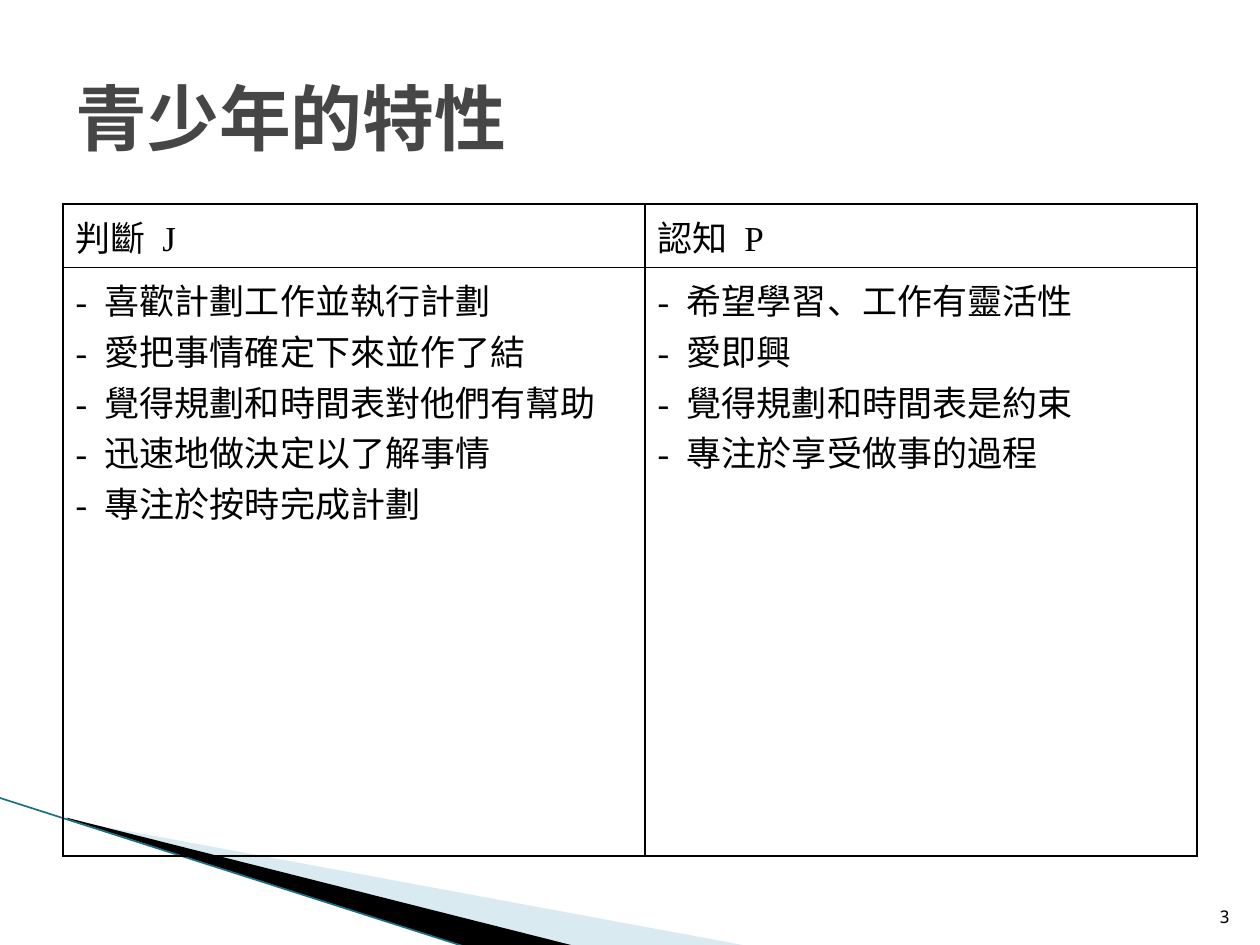
from lxml import etree
from pptx import Presentation
from pptx.dml.color import RGBColor
from pptx.enum.shapes import MSO_CONNECTOR
from pptx.enum.text import MSO_ANCHOR, PP_ALIGN
from pptx.oxml.ns import qn
from pptx.util import Inches, Pt

STRAIGHT = MSO_CONNECTOR.STRAIGHT
MIDDLE, BOTTOM = MSO_ANCHOR.MIDDLE, MSO_ANCHOR.BOTTOM
LEFT, RIGHT = PP_ALIGN.LEFT, PP_ALIGN.RIGHT
TITLE_ONLY = 5

BLACK = RGBColor(0x00, 0x00, 0x00)
GREY = RGBColor(0x46, 0x46, 0x46)
PALE_BLUE = RGBColor(0xA0, 0xCB, 0xDC)
TEAL = RGBColor(0x1B, 0x6F, 0x82)

SANS = "Noto Sans Mono"
SERIF = "Times New Roman"

HEADINGS = ["判斷 J", "認知 P"]
TRAITS = [
    [
        "- 喜歡計劃工作並執行計劃",
        "- 愛把事情確定下來並作了結",
        "- 覺得規劃和時間表對他們有幫助",
        "- 迅速地做決定以了解事情",
        "- 專注於按時完成計劃",
    ],
    [
        "- 希望學習、工作有靈活性",
        "- 愛即興",
        "- 覺得規劃和時間表是約束",
        "- 專注於享受做事的過程",
    ],
]


def write_text(frame, lines, size, font=SANS, color=BLACK, bold=False,
               align=LEFT, gap=0):
    """Fill a text frame; gap widens the first space of each line, in points."""
    frame.word_wrap = True
    for index, line in enumerate(lines):
        paragraph = frame.paragraphs[0] if index == 0 else frame.add_paragraph()
        paragraph.alignment = align
        for part in line.partition(" "):
            if not part:
                continue
            run = paragraph.add_run()
            run.text = part
            run.font.size = Pt(size)
            run.font.name = font
            run.font.bold = bold
            run.font.color.rgb = color
            if part == " " and gap:
                run.font._element.set("spc", str(gap * 100))


def add_borders(cell, width=1, color=BLACK):
    properties = cell._tc.get_or_add_tcPr()
    for position, side in enumerate(("a:lnL", "a:lnR", "a:lnT", "a:lnB")):
        line = etree.Element(qn(side), w=str(Pt(width)))
        fill = etree.SubElement(line, qn("a:solidFill"))
        etree.SubElement(fill, qn("a:srgbClr"), val=str(color))
        properties.insert(position, line)


class SlideBuilder:
    def __init__(self, slide):
        self.slide = slide
        self.shapes = slide.shapes

    def title(self, text, left, top, width, height):
        title = self.shapes.title
        title.left, title.top = Inches(left), Inches(top)
        title.width, title.height = Inches(width), Inches(height)
        title.text_frame.vertical_anchor = MIDDLE
        write_text(title.text_frame, [text], 41, color=GREY, bold=True)

    def polygon(self, points, color, opacity=100):
        corners = [(Inches(x), Inches(y)) for x, y in points]
        builder = self.shapes.build_freeform(*corners[0])
        builder.add_line_segments(corners[1:], close=True)
        shape = builder.convert_to_shape()
        shape.shadow.inherit = False
        shape.line.fill.background()
        shape.fill.solid()
        shape.fill.fore_color.rgb = color
        if opacity < 100:
            color_element = shape._element.spPr.find(".//" + qn("a:srgbClr"))
            etree.SubElement(color_element, qn("a:alpha"), val=str(opacity * 1000))

    def line(self, start, end, color, width):
        connector = self.shapes.add_connector(
            STRAIGHT, *(Inches(value) for value in (*start, *end)))
        connector.line.color.rgb = color
        connector.line.width = Pt(width)
        etree.SubElement(connector._element.spPr, qn("a:effectLst"))

    def table(self, rows, left, top, column_widths, row_heights):
        frame = self.shapes.add_table(
            len(row_heights), len(column_widths), Inches(left), Inches(top),
            Inches(sum(column_widths)), Inches(sum(row_heights)))
        table = frame.table
        table.first_row = table.horz_banding = False
        for column, width in zip(table.columns, column_widths):
            column.width = Inches(width)
        for row, height, contents in zip(table.rows, row_heights, rows):
            row.height = Inches(height)
            for cell, lines in zip(row.cells, contents):
                cell.fill.background()
                add_borders(cell)
                write_text(cell.text_frame, lines, 20, font=SERIF, gap=5)

    def page_number(self, text, left, top, width, height):
        box = self.shapes.add_textbox(
            Inches(left), Inches(top), Inches(width), Inches(height))
        box.text_frame.vertical_anchor = BOTTOM
        write_text(box.text_frame, [text], 10, align=RIGHT)


def main():
    presentation = Presentation()
    presentation.slide_width = Inches(10)
    presentation.slide_height = Inches(7.5)
    layout = presentation.slide_layouts[TITLE_ONLY]
    builder = SlideBuilder(presentation.slides.add_slide(layout))

    builder.polygon([(0.55, 6.51), (5.95, 7.51), (4.56, 7.51), (0.55, 6.5)],
                    PALE_BLUE, opacity=40)
    builder.polygon([(0.53, 6.49), (4.57, 7.51), (3.72, 7.52), (0.54, 6.5)], BLACK)
    builder.line((-0.01, 6.33), (3.71, 7.52), TEAL, 0.95)
    builder.table([[[heading] for heading in HEADINGS], TRAITS],
                  0.5, 1.62, column_widths=[4.62, 4.38], row_heights=[0.48, 4.67])
    builder.title("青少年的特性", 0.5, 0.3, 9, 1.25)
    builder.page_number("3", 9.46, 7.01, 0.4, 0.4)

    presentation.save("out.pptx")


if __name__ == "__main__":
    main()
